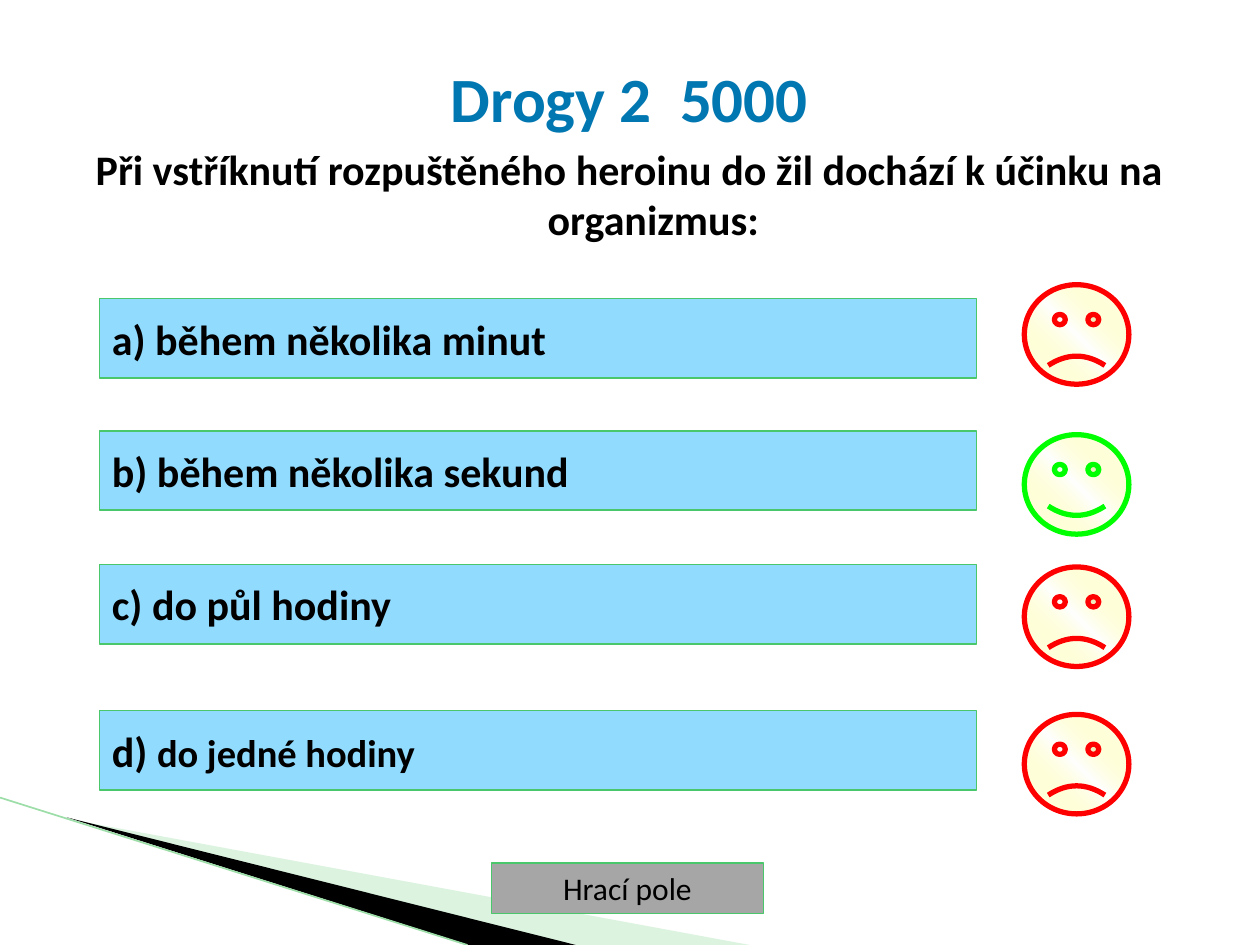
from dataclasses import dataclass

from lxml import etree
from pptx import Presentation
from pptx import util as u
from pptx.dml.color import RGBColor
from pptx.enum import shapes, text
from pptx.oxml import parse_xml
from pptx.oxml.ns import nsdecls, qn


@dataclass(frozen=True)
class Theme:
    font: str = "Calibri"
    title: str = "0077B1"
    ink: str = "000000"
    bar: str = "91DBFF"
    button: str = "A6A6A6"
    edge: str = "49C76A"
    wedge: str = "A5E1AF"
    wedge_line: str = "9CDDA8"
    right: str = "00FF00"
    wrong: str = "FF0000"
    glow: str = "FFFF66"
    white: str = "FFFFFF"
    title_size: int = 36
    body_size: int = 24
    small_size: int = 22
    button_size: int = 18


T = Theme()
WIDTH, HEIGHT = u.Inches(10), u.Inches(7.5)
BAR_LEFT, BAR_WIDTH, BAR_HEIGHT = 7.9, 69.6, 8.4
FACE_LEFT, FACE_WIDTH, FACE_HEIGHT = 81.3, 8.3, 10.53
ANSWERS = [
    (31.6, 30.13, [("a) během několika minut", T.body_size)], False),
    (45.6, 46, [("b) během několika sekund", T.body_size)], True),
    (59.73, 60, [("c) do půl hodiny", T.body_size)], False),
    (75.2, 75.6, [("d) ", T.body_size), ("do jedné hodiny", T.small_size)], False),
]


def point(x, y):
    return round(WIDTH * x / 100), round(HEIGHT * y / 100)


def box(left, top, width, height):
    return *point(left, top), *point(width, height)


def rgb(color):
    return RGBColor.from_string(color)


def add_text(p, words, size=T.body_size, color=T.ink, bold=True):
    r = p.add_run()
    r.text = words
    r.font.name = T.font
    r.font.size = u.Pt(size)
    r.font.bold = bold
    r.font.color.rgb = rgb(color)


def style(sp, fill=None, line=None, width=1):
    sp.shadow.inherit = False
    if fill:
        sp.fill.solid()
        sp.fill.fore_color.rgb = rgb(fill)
    if line:
        sp.line.color.rgb = rgb(line)
        sp.line.width = u.Pt(width)
    else:
        sp.line.fill.background()


def fill_placeholder(sp, area, words, **fmt):
    sp.left, sp.top, sp.width, sp.height = area
    tf = sp.text_frame
    tf.word_wrap = True
    tf.auto_size = text.MSO_AUTO_SIZE.NONE
    tf.vertical_anchor = text.MSO_ANCHOR.TOP
    p = tf.paragraphs[0]
    p.alignment = text.PP_ALIGN.CENTER
    p.space_before = u.Pt(0)
    pPr = p._p.get_or_add_pPr()
    pPr.set("marL", str(u.Inches(0.38)))
    pPr.set("indent", str(-u.Inches(0.38)))
    etree.SubElement(pPr, qn("a:buNone"))
    add_text(p, words, **fmt)


def add_wedge(slide, points, color, alpha=100):
    start, *rest = [point(*xy) for xy in points]
    builder = slide.shapes.build_freeform(*start, scale=1.0)
    builder.add_line_segments(rest, close=True)
    sp = builder.convert_to_shape()
    style(sp, fill=color)
    clr = sp._element.spPr.find(qn("a:solidFill"))[0]
    etree.SubElement(clr, qn("a:alpha"), val=str(alpha * 1000))


def add_edge(slide, start, end):
    line = slide.shapes.add_connector(
        shapes.MSO_CONNECTOR.STRAIGHT, *point(*start), *point(*end))
    line.line.color.rgb = rgb(T.wedge_line)
    line.line.width = u.Pt(0.95)
    etree.SubElement(line._element.spPr, qn("a:effectLst"))


def add_button(slide, area, runs, fill, width=1, align=text.PP_ALIGN.LEFT, bold=True):
    sp = slide.shapes.add_shape(shapes.MSO_SHAPE.ACTION_BUTTON_CUSTOM, *area)
    style(sp, fill, T.edge, width)
    tf = sp.text_frame
    tf.word_wrap = False
    tf.vertical_anchor = text.MSO_ANCHOR.MIDDLE
    p = tf.paragraphs[0]
    p.alignment = align
    for words, size in runs:
        add_text(p, words, size=size, bold=bold)


def add_face(slide, top, correct):
    sp = slide.shapes.add_shape(
        shapes.MSO_SHAPE.SMILEY_FACE, *box(FACE_LEFT, top, FACE_WIDTH, FACE_HEIGHT))
    sp.adjustments[0] = 0.047 if correct else -0.047
    style(sp, line=T.right if correct else T.wrong, width=3)
    gradient = parse_xml(
        f'<a:gradFill {nsdecls("a")} rotWithShape="1"><a:gsLst>'
        f'<a:gs pos="0"><a:srgbClr val="{T.white}"/></a:gs>'
        f'<a:gs pos="50000"><a:srgbClr val="{T.glow}"><a:alpha val="0"/></a:srgbClr></a:gs>'
        f'<a:gs pos="100000"><a:srgbClr val="{T.white}"/></a:gs>'
        '</a:gsLst><a:lin ang="18900000" scaled="1"/></a:gradFill>')
    sp._element.spPr.find(qn("a:prstGeom")).addnext(gradient)


def main():
    prs = Presentation()
    prs.slide_width, prs.slide_height = WIDTH, HEIGHT
    slide = prs.slides.add_slide(prs.slide_layouts[1])
    title, body = slide.placeholders

    add_wedge(slide, [(5.5, 86.7), (59.5, 100), (45.6, 100)], T.wedge, alpha=40)
    add_wedge(slide, [(5.3, 86.5), (45.7, 100), (37.2, 100)], T.ink)
    add_edge(slide, (0, 84.4), (37.1, 100))

    fill_placeholder(title, box(3.9, 5.6, 92.1, 9), "Drogy 2  5000",
                     size=T.title_size, color=T.title)
    fill_placeholder(body, box(3.9, 14.5, 92.1, 13),
                     "Při vstříknutí rozpuštěného heroinu do žil dochází k účinku na organizmus:")

    for bar_top, face_top, runs, correct in ANSWERS:
        add_button(slide, box(BAR_LEFT, bar_top, BAR_WIDTH, BAR_HEIGHT), runs, T.bar)
        add_face(slide, face_top, correct)

    add_button(slide, box(39, 91.33, 21.6, 5.33), [("Hrací pole", T.button_size)],
               T.button, width=0.75, align=text.PP_ALIGN.CENTER, bold=False)
    prs.save("out.pptx")


if __name__ == "__main__":
    main()
